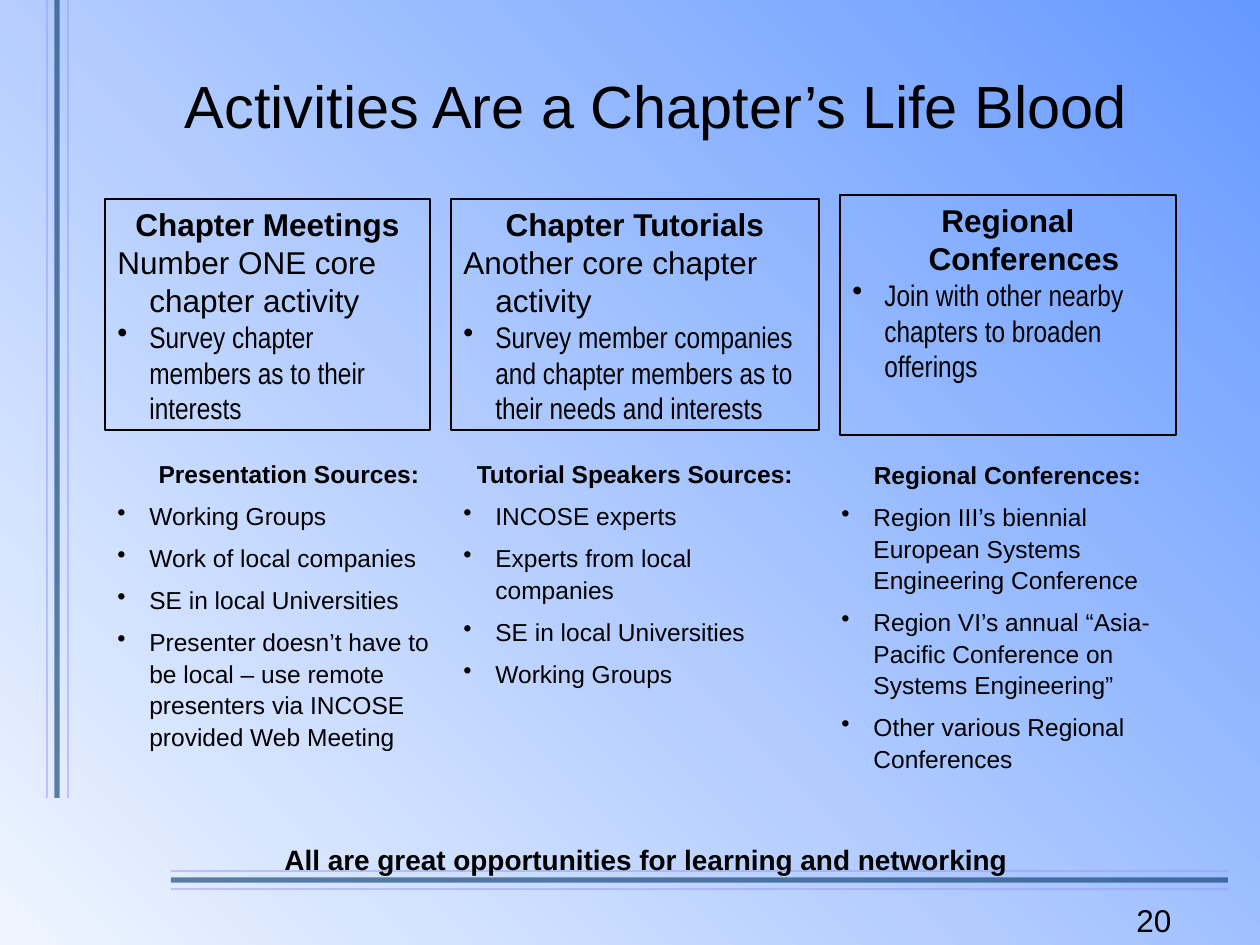
from lxml import etree
from pptx import Presentation
from pptx.dml.color import RGBColor
from pptx.enum.shapes import MSO_CONNECTOR, MSO_SHAPE
from pptx.enum.text import MSO_ANCHOR, PP_ALIGN
from pptx.oxml.ns import qn
from pptx.util import Emu, Pt

STRAIGHT = MSO_CONNECTOR.STRAIGHT
RECTANGLE = MSO_SHAPE.RECTANGLE
TOP, BOTTOM = MSO_ANCHOR.TOP, MSO_ANCHOR.BOTTOM
LEFT, CENTER = PP_ALIGN.LEFT, PP_ALIGN.CENTER

EMU_PER_PX = 914400 / 126
HANGING_INDENT = 32
BLACK = "000000"


def px(length):
    return Emu(round(length * EMU_PER_PX))


def color(hex_string):
    return RGBColor.from_string(hex_string)


class SlideBuilder:
    """Holds the slide and its text style, and draws each kind of element."""

    def __init__(self, slide, font="Arial", narrow_font="Arial Narrow"):
        self.slide = slide
        self.font = font
        self.narrow_font = narrow_font

    def background(self, start, end, angle):
        fill = self.slide.background.fill
        fill.gradient()
        fill.gradient_angle = angle
        for stop, hex_string in zip(fill.gradient_stops, (start, end)):
            stop.color.rgb = color(hex_string)

    def line(self, begin, end, hex_string, width, opacity):
        connector = self.slide.shapes.add_connector(
            STRAIGHT, *map(px, begin + end))
        connector.line.color.rgb = color(hex_string)
        connector.line.width = Pt(width)
        properties = connector._element.spPr
        fill_color = properties.find(".//" + qn("a:srgbClr"))
        etree.SubElement(fill_color, qn("a:alpha"), val=str(opacity * 1000))
        etree.SubElement(properties, qn("a:effectLst"))

    def text_box(self, bounds, anchor=TOP):
        text_frame = self.slide.shapes.add_textbox(*map(px, bounds)).text_frame
        text_frame.word_wrap = True
        text_frame.vertical_anchor = anchor
        return text_frame

    def outlined_box(self, bounds):
        shape = self.slide.shapes.add_shape(RECTANGLE, *map(px, bounds))
        shape.shadow.inherit = False
        shape.fill.background()
        shape.line.color.rgb = color(BLACK)
        shape.line.width = Pt(0.75)
        shape.text_frame.vertical_anchor = TOP
        return shape.text_frame

    def add_text(self, text_frame, text, size, align=LEFT, bold=False,
                 font=None, hanging=False, bullet=False, spaced=False):
        """Fill the empty first paragraph, or add one after the others."""
        paragraph = text_frame.paragraphs[0]
        if paragraph.text:
            paragraph = text_frame.add_paragraph()
        paragraph.text = text
        properties = paragraph._p.get_or_add_pPr()
        if hanging:
            properties.set("marL", str(px(HANGING_INDENT)))
            properties.set("indent", str(-px(HANGING_INDENT)))
        if bullet:
            etree.SubElement(properties, qn("a:buChar"), char="•")
        paragraph.alignment = align
        if spaced:
            paragraph.line_spacing = Pt(18)
            paragraph.space_after = Pt(6)
        for run in paragraph.runs:
            run.font.name = font or self.font
            run.font.size = Pt(size)
            run.font.bold = bold
            run.font.color.rgb = color(BLACK)

    def activity(self, bounds, heading, summary, advice):
        text_frame = self.outlined_box(bounds)
        self.add_text(text_frame, heading, 18, CENTER, bold=True, hanging=True)
        if summary:
            self.add_text(text_frame, summary, 18, hanging=True)
        self.add_text(text_frame, advice, 17, font=self.narrow_font,
                      hanging=True, bullet=True)

    def source_list(self, bounds, heading, items):
        text_frame = self.text_box(bounds)
        self.add_text(text_frame, heading, 14, CENTER, bold=True, hanging=True,
                      spaced=True)
        for item in items:
            self.add_text(text_frame, item, 14, hanging=True, bullet=True,
                          spaced=True)


ACTIVITIES = [
    ((105, 199, 325, 231), "Chapter Meetings",
     "Number ONE core chapter activity",
     "Survey chapter members as to their interests"),
    ((451, 199, 368, 231), "Chapter Tutorials",
     "Another core chapter activity",
     "Survey member companies and chapter members as to their needs "
     "and interests"),
    ((840, 195, 336, 240), "Regional Conferences", None,
     "Join with other nearby chapters to broaden offerings"),
]

SOURCE_LISTS = [
    ((105, 451, 368, 310), "Presentation Sources:", [
        "Working Groups",
        "Work of local companies",
        "SE in local Universities",
        "Presenter doesn’t have to be local – use remote presenters via "
        "INCOSE provided Web Meeting",
    ]),
    ((451, 451, 368, 330), "Tutorial Speakers Sources:", [
        "INCOSE experts",
        "Experts from local companies",
        "SE in local Universities",
        "Working Groups",
    ]),
    ((829, 452, 357, 373), "Regional Conferences:", [
        "Region III’s biennial European Systems Engineering Conference",
        "Region VI’s annual “Asia-Pacific Conference on Systems "
        "Engineering”",
        "Other various Regional Conferences",
    ]),
]

THIN_LINE = ("9999FF", 1, 50)
THICK_LINE = ("003366", 3, 60)


def main():
    presentation = Presentation()
    presentation.slide_width, presentation.slide_height = px(1260), px(945)
    slide = presentation.slides.add_slide(presentation.slide_layouts[6])
    builder = SlideBuilder(slide)

    builder.background("EFF5FF", "6699FF", 45)
    for x, style in ((47, THIN_LINE), (68, THIN_LINE), (57, THICK_LINE)):
        builder.line((x, 0), (x, 798), *style)
    for y, style in ((889, THIN_LINE), (880, THICK_LINE), (871, THIN_LINE)):
        builder.line((1228, y), (171, y), *style)

    builder.add_text(builder.text_box((1124, 895, 84, 50)), "20", 18)
    builder.add_text(builder.text_box((105, 63, 1102, 84), BOTTOM),
                     "Activities Are a Chapter’s Life Blood", 34, CENTER)
    for activity, source_list in zip(ACTIVITIES, SOURCE_LISTS):
        builder.activity(*activity)
        builder.source_list(*source_list)
    builder.add_text(builder.text_box((126, 838, 1040, 44)),
                     "All are great opportunities for learning and networking",
                     16, CENTER, bold=True, spaced=True)

    presentation.save("out.pptx")


if __name__ == "__main__":
    main()
